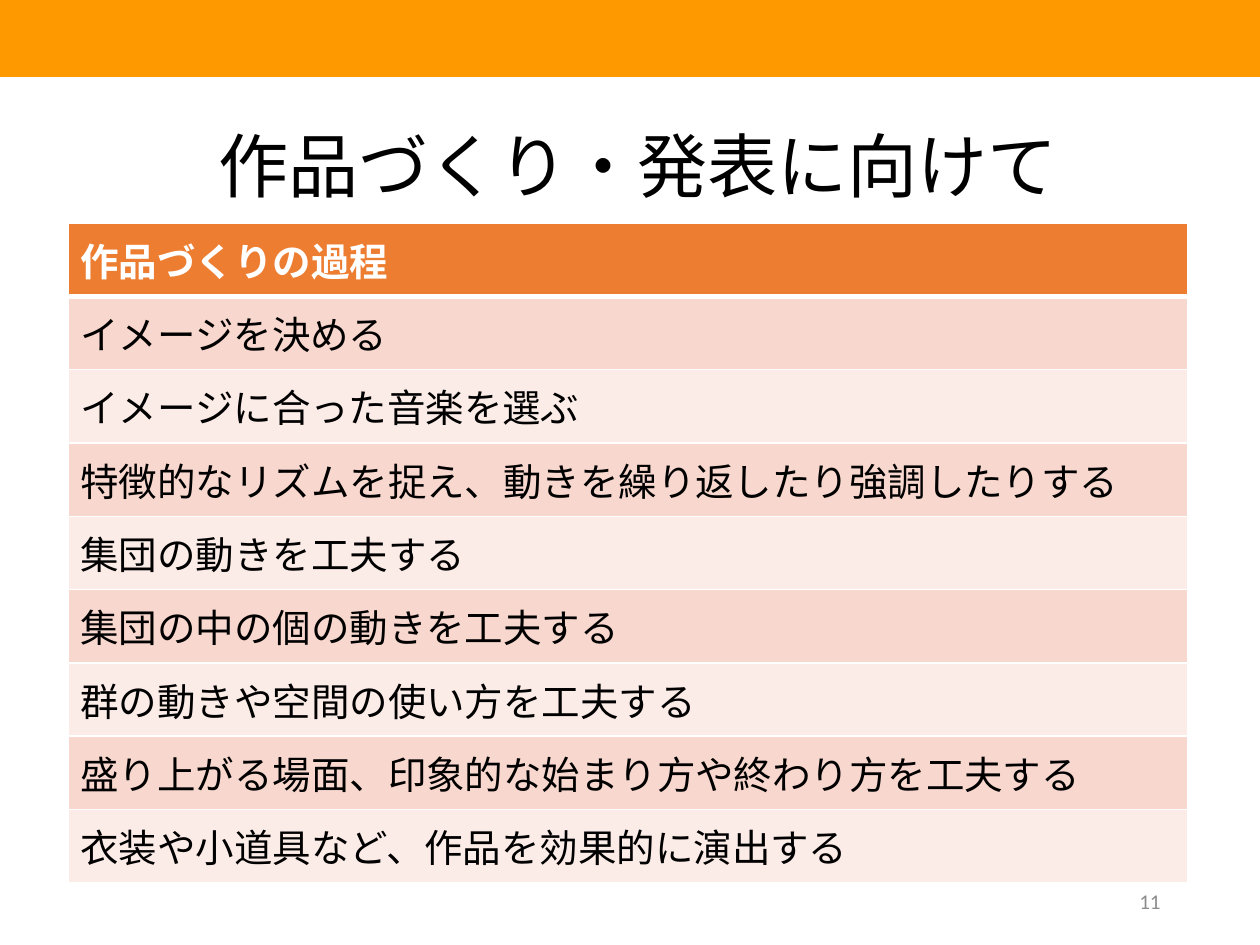
from lxml.etree import SubElement
from pptx import Presentation
from pptx.dml.color import RGBColor as RGB
from pptx.enum.shapes import MSO_SHAPE as Shape
from pptx.enum.text import MSO_ANCHOR as Anchor, PP_ALIGN as Align
from pptx.oxml.ns import qn
from pptx.util import Emu, Pt

BLACK = RGB(0x00, 0x00, 0x00)
WHITE = RGB(0xFF, 0xFF, 0xFF)
GRAY = RGB(0x8C, 0x8C, 0x8C)
AMBER = RGB(0xFF, 0x99, 0x00)
ORANGE = RGB(0xED, 0x7D, 0x31)
ROSE = RGB(0xF8, 0xD7, 0xCE)
PALE = RGB(0xFC, 0xEC, 0xE8)
ASIAN = "Noto Sans CJK JP"
HEAD = "作品づくりの過程"
STEPS = [
    "イメージを決める",
    "イメージに合った音楽を選ぶ",
    "特徴的なリズムを捉え、動きを繰り返したり強調したりする",
    "集団の動きを工夫する",
    "集団の中の個の動きを工夫する",
    "群の動きや空間の使い方を工夫する",
    "盛り上がる場面、印象的な始まり方や終わり方を工夫する",
    "衣装や小道具など、作品を効果的に演出する",
]


def px(count):
    return Emu(count * 914400 // 126)


def box(*sides):
    return [px(side) for side in sides]


def style(frame, text, size, color, face, bold=False, align=Align.LEFT):
    frame.text = text
    para = frame.paragraphs[0]
    para.alignment = align
    run = para.runs[0]
    font = run.font
    font.name, font.size, font.bold = face, Pt(size), bold
    font.color.rgb = color
    SubElement(font._element, qn("a:ea"), typeface=ASIAN)


def add_band(slide):
    band = slide.shapes.add_shape(Shape.RECTANGLE, *box(-2, 0, 1262, 77))
    band.shadow.inherit = False
    band.fill.solid()
    band.fill.fore_color.rgb = AMBER
    band.line.fill.background()


def set_title(slide):
    title = slide.shapes.title
    title.left, title.top, title.width, title.height = box(94, 90, 1088, 150)
    title.text_frame.vertical_anchor = Anchor.MIDDLE
    style(title.text_frame, "作品づくり・発表に向けて", 40, BLACK, ASIAN,
          align=Align.CENTER)


def add_page(slide):
    frame = slide.shapes.add_textbox(*box(890, 876, 283, 50)).text_frame
    frame.word_wrap = True
    frame.vertical_anchor = Anchor.MIDDLE
    style(frame, "11", 12, GRAY, "Calibri", align=Align.RIGHT)


def add_edge(cell, side, width):
    edge = SubElement(cell._tc.get_or_add_tcPr(), qn(f"a:{side}"),
                      w=str(Pt(width)))
    fill = SubElement(edge, qn("a:solidFill"))
    SubElement(fill, qn("a:srgbClr"), val=str(WHITE))


def set_cell(cell, row, text):
    first = row == 0
    for side in ("lnL", "lnR", "lnT", "lnB"):
        thick = (first and side == "lnB") or (row == 1 and side == "lnT")
        add_edge(cell, side, 3 if thick else 1)
    cell.fill.solid()
    cell.fill.fore_color.rgb = ORANGE if first else ROSE if row % 2 else PALE
    cell.vertical_anchor = Anchor.MIDDLE
    face = "Calibri" if row < 3 else "Arial"
    style(cell.text_frame, text, 22, WHITE if first else BLACK, face, first)


def add_steps(slide):
    rows = [HEAD, *STEPS]
    place = box(68, 223, 1120, 660)
    table = slide.shapes.add_table(len(rows), 1, *place).table
    for row, text in enumerate(rows):
        set_cell(table.cell(row, 0), row, text)


def main():
    deck = Presentation()
    deck.slide_width, deck.slide_height = box(1260, 945)
    slide = deck.slides.add_slide(deck.slide_layouts[5])
    add_band(slide)
    add_page(slide)
    set_title(slide)
    add_steps(slide)
    deck.save("out.pptx")


if __name__ == "__main__":
    main()
